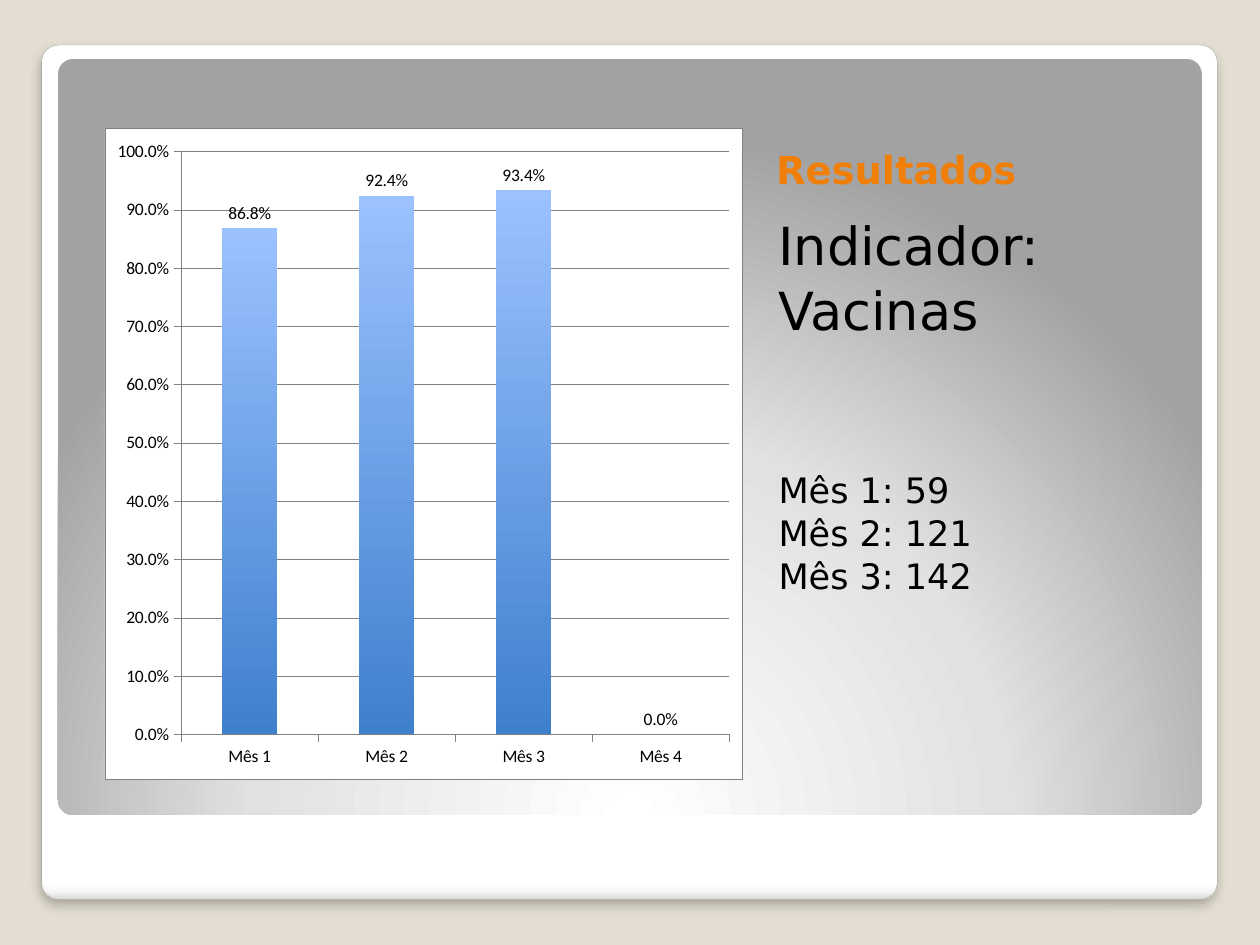
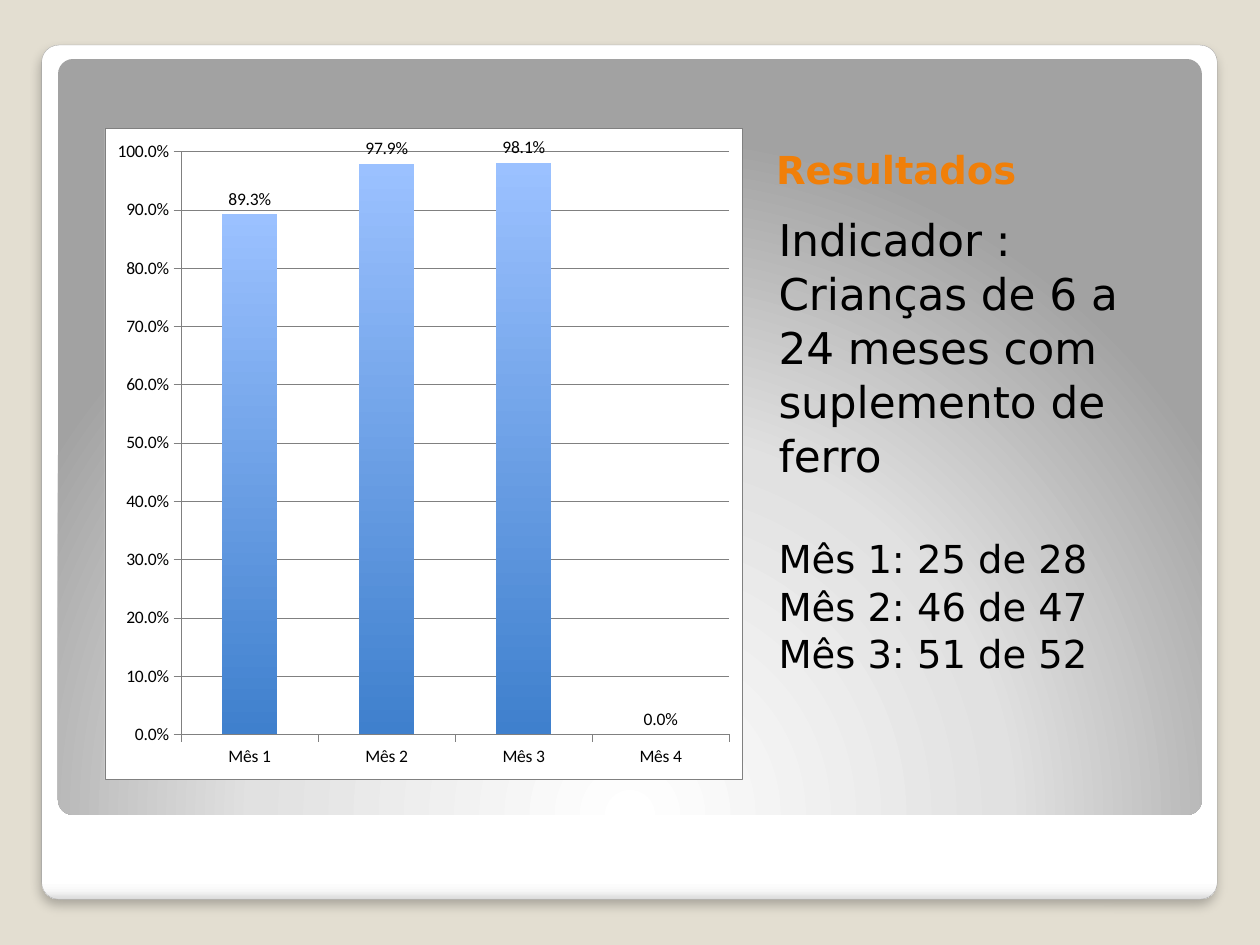
from lxml.etree import SubElement as Sub
from pptx import Presentation
from pptx.chart.data import CategoryChartData as Data
from pptx.dml.color import RGBColor as RGB
from pptx.enum.chart import XL_CHART_TYPE as Kind, XL_LABEL_POSITION as Spot
from pptx.enum.chart import XL_TICK_MARK as Tick
from pptx.enum.shapes import MSO_SHAPE as Form
from pptx.enum.text import MSO_ANCHOR as Anchor, MSO_AUTO_SIZE as Fit, PP_ALIGN as Align
from pptx.oxml import parse_xml
from pptx.oxml.ns import nsdecls, qn
from pptx.util import Cm, Pt

# Shared look
SAND = RGB(0xE3, 0xDE, 0xD1)
WHITE = RGB(0xFF, 0xFF, 0xFF)
PEARL = RGB(0xF7, 0xF7, 0xF7)
MIST = RGB(0xE1, 0xE1, 0xE1)
SILVER = RGB(0xDA, 0xDA, 0xDA)
STONE = RGB(0xA2, 0xA2, 0xA2)
EDGE = RGB(0xA4, 0xA4, 0xA4)
GREY = RGB(0x80, 0x80, 0x80)
BLACK = RGB(0, 0, 0)
ORANGE = RGB(0xF0, 0x7F, 0x09)
SKY = RGB(0x9B, 0xC1, 0xFF)
BLUE = RGB(0x3F, 0x80, 0xCD)
FONT = "DejaVu Sans"
LEAD = 1.03  # line spacing
LINE = 1.2   # line height in relation to text size

# Boxes in cm: left, top, width, height
CARD = (0.84, 0.91, 23.7, 17.22)
PANEL = (1.17, 1.19, 23.06, 15.24)
GRAPH = (2.11, 2.59, 12.85, 13.13)
SIDE = (15.39, 1.47, 8.26, 14.22)
HEAD = 2.54  # height of the title

MONTHS = ["Mês 1", "Mês 2", "Mês 3", "Mês 4"]
# topic, its size, blank lines below it, counts, their size, chart values
PAGES = [
    ("Indicador: Vacinas", 30, 2,
     ["59", "121", "142"], 20, [0.868, 0.924, 0.934, 0]),
    ("Indicador : Crianças de 6 a 24 meses com suplemento de ferro", 25, 1,
     ["25 de 28", "46 de 47", "51 de 52"], 22, [0.893, 0.979, 0.981, 0]),
]


def blend(fill, host, stops, ring=False):
    """Fill with colour stops, downwards or as a ring."""
    fill.gradient()
    grad = host.find(".//" + qn("a:gradFill"))
    for part in list(grad):
        grad.remove(part)
    row = Sub(grad, qn("a:gsLst"))
    for pos, tone in stops:
        stop = Sub(row, qn("a:gs"), pos=str(pos * 1000))
        Sub(stop, qn("a:srgbClr"), val=str(tone))
    if ring:
        path = Sub(grad, qn("a:path"), path="circle")
        Sub(path, qn("a:fillToRect"), l="50000", t="175000", r="50000", b="-75000")
    else:
        Sub(grad, qn("a:lin"), ang="5400000", scaled="0")


def stroke(line, tone, width):
    line.color.rgb = tone
    line.width = Pt(width)


def write(para, text, size, tone, bold=False):
    para.alignment = Align.LEFT
    run = para.add_run()
    run.text = text
    font = run.font
    font.name, font.size, font.bold = FONT, Pt(size), bold
    font.color.rgb = tone


def plate(slide, box):
    """Rounded plate without shadow."""
    shape = slide.shapes.add_shape(Form.ROUNDED_RECTANGLE, *map(Cm, box))
    shape.adjustments[0] = 0.02
    shape.shadow.inherit = False
    return shape


def frame(slide):
    """Put the backdrop on the layout, behind its placeholders."""
    layout = slide.slide_layout
    back = layout.background.fill
    back.solid()
    back.fore_color.rgb = SAND

    card = plate(slide, CARD)
    blend(card.fill, card.element,
          [(0, WHITE), (98, WHITE), (99, PEARL), (100, SILVER)])
    stroke(card.line, EDGE, 0.16)
    glow = card.element.spPr.find(qn("a:effectLst"))
    shade = Sub(glow, qn("a:outerShdw"), blurRad=str(Pt(6)), dist=str(Pt(4)),
                dir="5400000", algn="t", rotWithShape="0")
    tone = Sub(shade, qn("a:srgbClr"), val=str(BLACK))
    Sub(tone, qn("a:alpha"), val="25000")

    panel = plate(slide, PANEL)
    blend(panel.fill, panel.element, [(0, WHITE), (55, MIST), (100, STONE)], ring=True)
    panel.line.fill.background()

    for spot, shape in enumerate((card, panel)):
        shape.element.nvSpPr.cNvPr.set("id", str(20 + spot))
        layout.shapes.element.insert(2 + spot, shape.element)


def place(shape, left, top, width, height):
    shape.left, shape.top = Cm(left), Cm(top)
    shape.width, shape.height = Cm(width), Cm(height)


def notes(slide, box, topic, big, blank, counts, small):
    """Title, topic and monthly counts in one column."""
    left, top, width, height = box
    title, body = slide.placeholders
    place(title, left, top, width, HEAD)
    frame = title.text_frame
    frame.auto_size = Fit.NONE
    frame.vertical_anchor = Anchor.BOTTOM
    write(frame.paragraphs[0], "Resultados", 22, ORANGE, bold=True)

    place(body, left, top + HEAD, width, height - HEAD)
    frame = body.text_frame
    frame.auto_size = Fit.NONE
    frame.margin_top = Cm(0.25)
    rows = [(topic, big)]
    rows += [(f"{month}: {count}", small) for month, count in zip(MONTHS, counts)]
    for num, (text, size) in enumerate(rows):
        para = frame.add_paragraph() if num else frame.paragraphs[0]
        para.line_spacing = LEAD
        para.space_before = Pt(blank * big * LINE if num == 1 else 0)
        para.space_after = Pt(0)
        write(para, text, size, BLACK)
        props = para._p.get_or_add_pPr()
        props.set("marL", str(Cm(0.05)))
        props.set("indent", "0")
        Sub(props, qn("a:buNone"))


def ground(line):
    """White chart ground with the given outline."""
    return parse_xml(
        f'<c:spPr {nsdecls("c", "a")}><a:solidFill><a:srgbClr val="{WHITE}"/>'
        f'</a:solidFill><a:ln w="{Pt(0.25)}">{line}</a:ln></c:spPr>')


def graph(slide, box, values):
    """Column chart of monthly shares."""
    data = Data(number_format="0.0%")
    data.categories = MONTHS
    data.add_series("Series 1", values)
    chart = slide.shapes.add_chart(Kind.COLUMN_CLUSTERED, *map(Cm, box), data).chart
    chart.has_title = chart.has_legend = False
    chart.font.name, chart.font.size = "Calibri", Pt(10)
    chart.font.color.rgb = BLACK

    root = chart.element
    root.find(qn("c:chart")).addnext(
        ground(f'<a:solidFill><a:srgbClr val="{GREY}"/></a:solidFill>'))
    root.find(".//" + qn("c:plotArea")).append(ground("<a:noFill/>"))

    # Axes
    for axis in (chart.category_axis, chart.value_axis):
        axis.major_tick_mark, axis.minor_tick_mark = Tick.OUTSIDE, Tick.NONE
        stroke(axis.format.line, GREY, 0.25)
    axis = chart.value_axis
    axis.minimum_scale, axis.maximum_scale, axis.major_unit = 0, 1, 0.1
    axis.has_major_gridlines = True
    stroke(axis.major_gridlines.format.line, GREY, 0.25)

    # Columns and labels
    plot = chart.plots[0]
    plot.gap_width = 150
    plot.vary_by_categories = False
    bars = plot.series[0]
    blend(bars.format.fill, bars._element, [(0, SKY), (100, BLUE)])
    tags = bars.data_labels
    tags.show_value = True
    tags.position = Spot.OUTSIDE_END
    for part in (axis.tick_labels, tags):
        part.number_format = "0.0%"
        part.number_format_is_linked = False


def main():
    deck = Presentation()
    deck.slide_width, deck.slide_height = Cm(25.4), Cm(19.05)
    layout = deck.slide_layouts[1]
    for num, (*words, values) in enumerate(PAGES):
        slide = deck.slides.add_slide(layout)
        if num == 0:
            frame(slide)
        notes(slide, SIDE, *words)
        graph(slide, GRAPH, values)
    deck.save("out.pptx")


if __name__ == "__main__":
    main()
